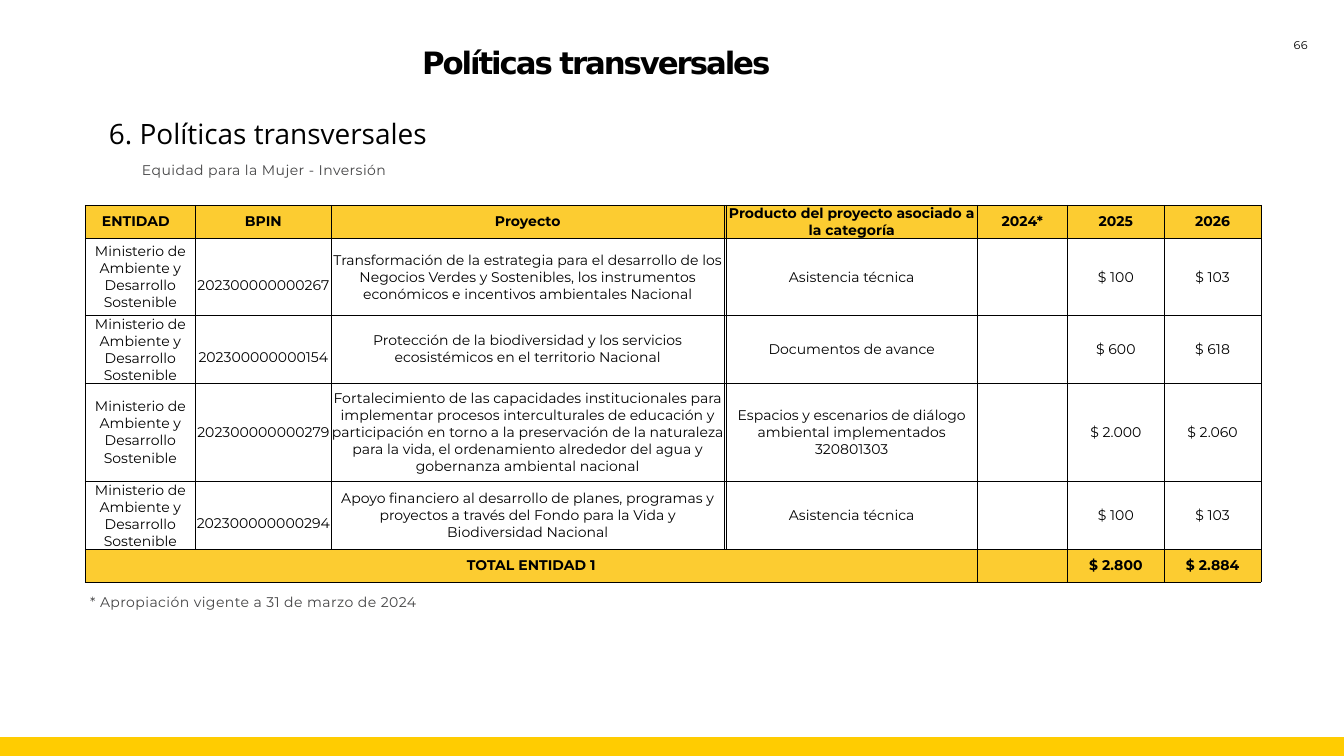
import pptx
import pptx.util
import pptx.dml.color
import pptx.enum.shapes
import pptx.enum.text
import pptx.oxml
import pptx.oxml.ns

Pt = pptx.util.Pt
ALIGN = pptx.enum.text.PP_ALIGN
ANCHOR = pptx.enum.text.MSO_ANCHOR
BLACK, GRAY, YELLOW, GOLD = "000000", "454546", "FCCC31", "FFCC01"


def color(hex_value):
    return pptx.dml.color.RGBColor.from_string(hex_value)


def format_text(text_frame, size, font_name, hex_value, bold=False,
                alignment=ALIGN.LEFT, line_spacing=1.0, character_spacing=0):
    """Format every paragraph and run; character_spacing is in hundredths of a point."""
    for paragraph in text_frame.paragraphs:
        paragraph.alignment = alignment
        paragraph.line_spacing = line_spacing
        paragraph.font.size = Pt(size)
        for run in paragraph.runs:
            run.font.size = Pt(size)
            run.font.name = font_name
            run.font.bold = bold
            run.font.color.rgb = color(hex_value)
            if character_spacing:
                run.font._element.set("spc", str(character_spacing))


presentation = pptx.Presentation()
presentation.slide_width = Pt(1920)
presentation.slide_height = Pt(1080)
slide = presentation.slides.add_slide(presentation.slide_layouts[6])

# Footer bar
bar = slide.shapes.add_shape(pptx.enum.shapes.MSO_SHAPE.RECTANGLE,
                             Pt(0), Pt(1053), Pt(1920), Pt(27))
bar.shadow.inherit = False
bar.fill.solid()
bar.fill.fore_color.rgb = color(GOLD)
bar.line.fill.background()

# Texts: content, box, inner margins, anchor, format
note_format = dict(size=20, font_name="Montserrat", hex_value=GRAY,
                   line_spacing=1.5, character_spacing=60)
texts = [
    ("66", (1829.5, 42.5, 57, 33), (7.2, 3.6), ANCHOR.MIDDLE,
     dict(size=16, font_name="Montserrat", hex_value=BLACK, alignment=ALIGN.CENTER,
          line_spacing=1.5, character_spacing=60)),
    ("Políticas transversales", (-62.6, 68.4, 1828.8, 88), (0, 0), ANCHOR.TOP,
     dict(size=44, font_name="DejaVu Sans", hex_value=BLACK, bold=True,
          alignment=ALIGN.CENTER, line_spacing=0.9, character_spacing=-300)),
    ("6. Políticas transversales", (155.5, 167, 1720, 57), (0, 0), ANCHOR.TOP,
     dict(size=40, font_name="Open Sans", hex_value=BLACK)),
    ("Equidad para la Mujer - Inversión", (195.8, 214.6, 1080, 40), (7.2, 3.6),
     ANCHOR.TOP, note_format),
    ("* Apropiación vigente a 31 de marzo de 2024", (121.7, 832.3, 1678, 37), (7.2, 3.6),
     ANCHOR.TOP, note_format),
]
for content, box, (side_margin, end_margin), anchor, text_format in texts:
    text_box = slide.shapes.add_textbox(*map(Pt, box))
    text_frame = text_box.text_frame
    text_frame.word_wrap = True
    text_frame.vertical_anchor = anchor
    text_frame.margin_left = text_frame.margin_right = Pt(side_margin)
    text_frame.margin_top = text_frame.margin_bottom = Pt(end_margin)
    text_frame.text = content
    format_text(text_frame, **text_format)

# Table: the fourth column is the thin gap that reads as a double rule
entity = "Ministerio de Ambiente y Desarrollo Sostenible"
rows = [
    ["ENTIDAD", "BPIN", "Proyecto", "", "Producto del proyecto asociado a la categoría",
     "2024*", "2025", "2026"],
    [entity, "202300000000267",
     "Transformación de la estrategia para el desarrollo de los Negocios Verdes y "
     "Sostenibles, los instrumentos económicos e incentivos ambientales Nacional",
     "", "Asistencia técnica", "", "$ 100", "$ 103"],
    [entity, "202300000000154",
     "Protección de la biodiversidad y los servicios ecosistémicos en el territorio Nacional",
     "", "Documentos de avance", "", "$ 600", "$ 618"],
    [entity, "202300000000279",
     "Fortalecimiento de las capacidades institucionales para implementar procesos "
     "interculturales de educación y participación en torno a la preservación de la "
     "naturaleza para la vida, el ordenamiento alrededor del agua y gobernanza "
     "ambiental nacional",
     "", "Espacios y escenarios de diálogo ambiental implementados\n320801303",
     "", "$ 2.000", "$ 2.060"],
    [entity, "202300000000294",
     "Apoyo financiero al desarrollo de planes, programas y proyectos a través del "
     "Fondo para la Vida y Biodiversidad Nacional",
     "", "Asistencia técnica", "", "$ 100", "$ 103"],
    ["TOTAL ENTIDAD 1", "", "", "", "", "", "$ 2.800", "$ 2.884"],
]
column_widths = [157.7, 193.7, 561.6, 2.2, 358.6, 128.9, 138.2, 138.2]
row_heights = [47, 110, 95, 141, 95, 47]
table = slide.shapes.add_table(len(rows), len(column_widths), Pt(121.7), Pt(293),
                               Pt(sum(column_widths)), Pt(sum(row_heights))).table
table.first_row = False
table.horz_banding = False
for column, width in zip(table.columns, column_widths):
    column.width = Pt(width)
for row, height in zip(table.rows, row_heights):
    row.height = Pt(height)

for row_index, values in enumerate(rows):
    is_band = row_index in (0, len(rows) - 1)
    for column_index, value in enumerate(values):
        cell = table.cell(row_index, column_index)
        cell.margin_left = cell.margin_right = cell.margin_top = cell.margin_bottom = 0
        cell.vertical_anchor = ANCHOR.MIDDLE
        cell.text_frame.text = value
        format_text(cell.text_frame, 20, "Montserrat", BLACK, is_band, ALIGN.CENTER)
        properties = cell._tc.get_or_add_tcPr()
        for side in ("lnL", "lnR", "lnT", "lnB"):
            properties.append(pptx.oxml.parse_xml(
                f'<a:{side} {pptx.oxml.ns.nsdecls("a")} w="12700"><a:solidFill>'
                f'<a:srgbClr val="{BLACK}"/></a:solidFill></a:{side}>'))
        if is_band:
            cell.fill.solid()
            cell.fill.fore_color.rgb = color(YELLOW)
        else:
            cell.fill.background()

table.cell(0, 0).margin_right = Pt(13)
for row_index in (1, 2, 4):
    table.cell(row_index, 1).margin_top = Pt(24)
table.cell(5, 0).merge(table.cell(5, 4))

presentation.save("out.pptx")
